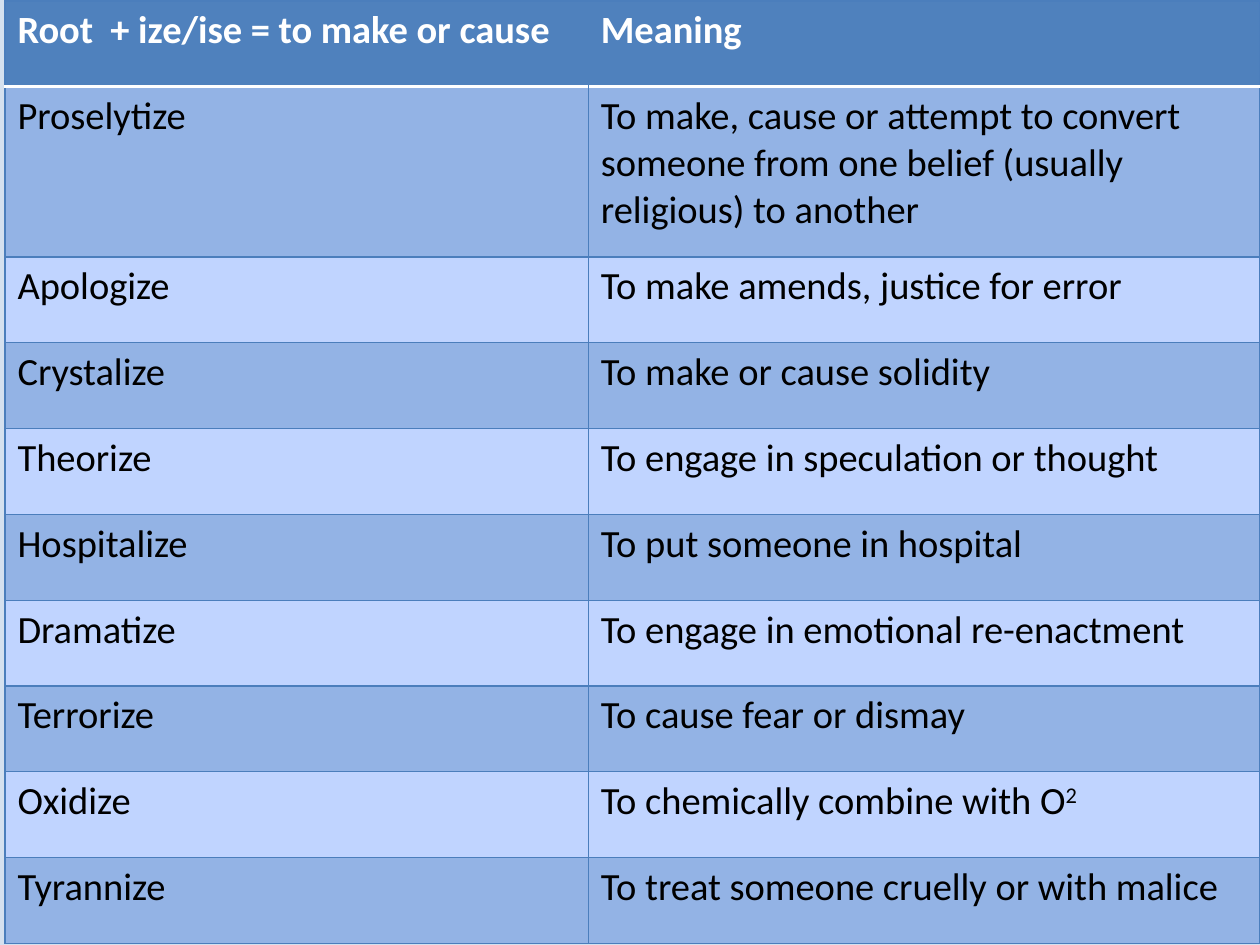
from lxml import etree
from pptx import Presentation
from pptx.dml.color import RGBColor
from pptx.oxml.ns import qn
from pptx.util import Cm, Pt

BLANK_LAYOUT = 6
COLORS = {
    "background": "D5E1EF",
    "header": "4F81BD",
    "band": "93B3E5",
    "plain": "C0D4FF",
    "grid": "4B7EBC",
    "header_text": "FFFFFF",
    "body_text": "000000",
}
GRID_LINE = ("grid", 0.75)
HEADER_RULE = ("header_text", 2)
TEXT_FORMAT = {"name": "Calibri", "size": Pt(22)}
COLUMN_WIDTHS = [Cm(11.76), Cm(13.54)]
ROW_HEIGHT, TALL_ROW_HEIGHT = Cm(1.73), Cm(3.43)
TALL_ROW = 1

# Text after "^" is superscript.
VERBS = [
    ("Root  + ize/ise = to make or cause", "Meaning"),
    ("Proselytize", "To make, cause or attempt to convert someone "
                    "from one belief (usually religious) to another"),
    ("Apologize", "To make amends, justice for error"),
    ("Crystalize", "To make or cause solidity"),
    ("Theorize", "To engage in speculation or thought"),
    ("Hospitalize", "To put someone in hospital"),
    ("Dramatize", "To engage in emotional re-enactment"),
    ("Terrorize", "To cause fear or dismay"),
    ("Oxidize", "To chemically combine with O^2"),
    ("Tyrannize", "To treat someone cruelly or with malice"),
]


def rgb(name):
    return RGBColor.from_string(COLORS[name])


def set_borders(cell, borders):
    """Draw cell sides, given in the order L, R, T, B; None means no line."""
    properties = cell._tc.get_or_add_tcPr()
    for side, border in borders.items():
        line = etree.SubElement(properties, qn(f"a:ln{side}"))
        if border is None:
            etree.SubElement(line, qn("a:noFill"))
            continue
        color, width = border
        line.set("w", str(Pt(width)))
        fill = etree.SubElement(line, qn("a:solidFill"))
        etree.SubElement(fill, qn("a:srgbClr"), val=COLORS[color])


def write_text(cell, text, is_header):
    paragraph = cell.text_frame.paragraphs[0]
    for position, part in enumerate(text.split("^")):
        run = paragraph.add_run()
        run.text = part
        for attribute, value in TEXT_FORMAT.items():
            setattr(run.font, attribute, value)
        run.font.bold = is_header
        run.font.color.rgb = rgb("header_text" if is_header else "body_text")
        if position:
            run.font._element.set("baseline", "30000")


def format_cell(cell, row, column):
    borders = dict.fromkeys("LRTB", GRID_LINE)
    if row == 0:
        borders["B"] = HEADER_RULE
        borders["L" if column else "R"] = None
    elif row == 1:
        borders["T"] = HEADER_RULE
    set_borders(cell, borders)
    cell.fill.solid()
    band = "band" if row % 2 else "plain"
    cell.fill.fore_color.rgb = rgb("header" if row == 0 else band)


def add_verb_table(slide):
    heights = [TALL_ROW_HEIGHT if row == TALL_ROW else ROW_HEIGHT
               for row in range(len(VERBS))]
    table = slide.shapes.add_table(
        len(VERBS), len(COLUMN_WIDTHS), Cm(0.1), Cm(0.02),
        sum(COLUMN_WIDTHS), sum(heights)).table
    for column, width in zip(table.columns, COLUMN_WIDTHS):
        column.width = width
    for row, (entry, height) in enumerate(zip(VERBS, heights)):
        table.rows[row].height = height
        for column, text in enumerate(entry):
            cell = table.cell(row, column)
            format_cell(cell, row, column)
            write_text(cell, text, is_header=row == 0)


def main():
    presentation = Presentation()
    presentation.slide_width = Cm(25.4)
    presentation.slide_height = Cm(19.05)
    slide = presentation.slides.add_slide(
        presentation.slide_layouts[BLANK_LAYOUT])
    slide.background.fill.solid()
    slide.background.fill.fore_color.rgb = rgb("background")
    add_verb_table(slide)
    presentation.save("out.pptx")


if __name__ == "__main__":
    main()
